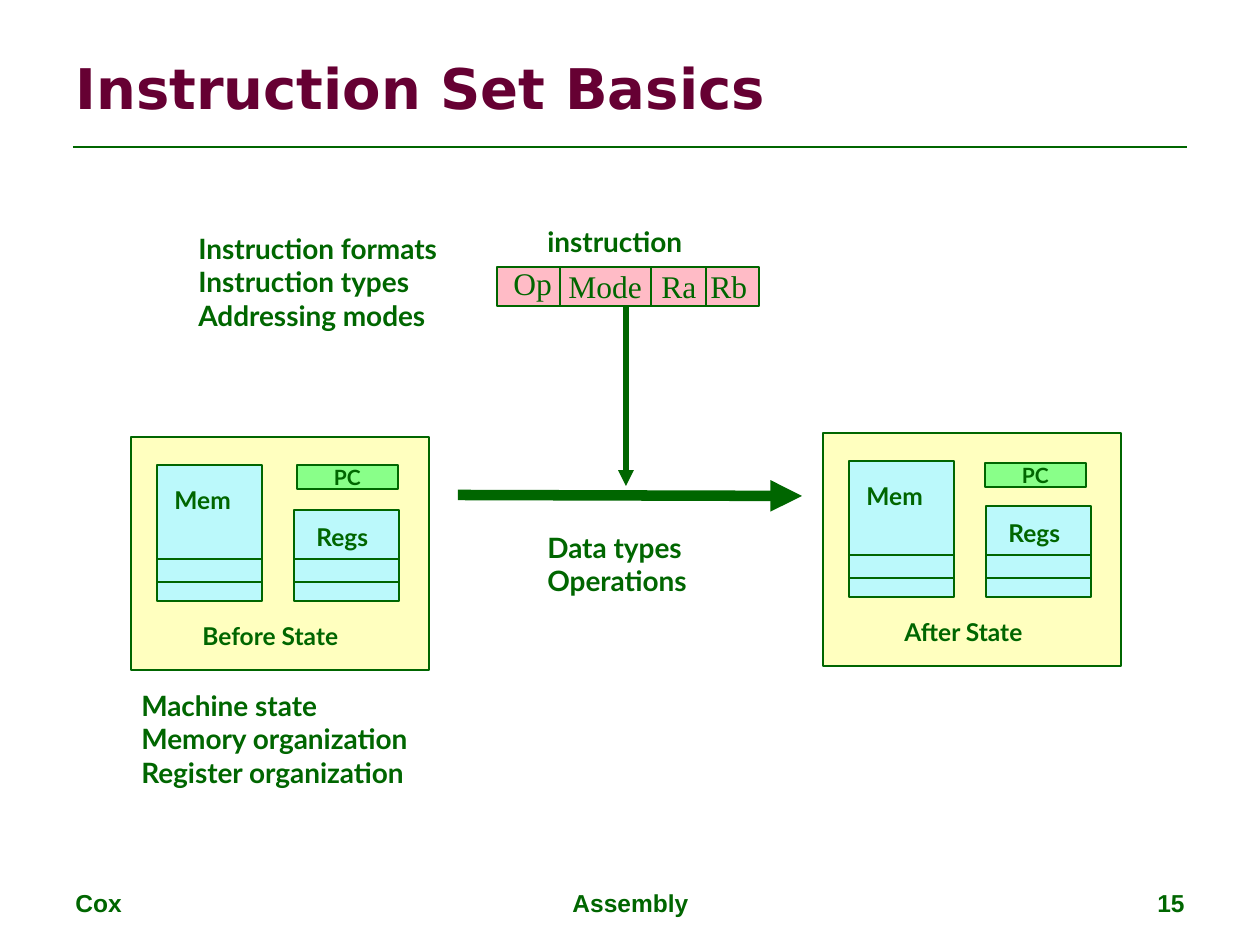
"""Build the instruction set basics slide with machine states before and after an instruction."""
import dataclasses
import typing

import lxml.etree
import pptx
import pptx.dml.color
import pptx.enum.shapes
import pptx.enum.text
import pptx.oxml.ns
import pptx.util

EMU_PER_PX = 914400 / 126
COLORS = {
    "green": "006600",
    "title": "660033",
    "instruction": "FFBBC6",
    "state": "FFFFBF",
    "storage": "BBF9FB",
    "counter": "89FF89",
}
ALIGN = pptx.enum.text.PP_ALIGN
ANCHOR = pptx.enum.text.MSO_ANCHOR


@dataclasses.dataclass(frozen=True)
class TextStyle:
    font: str
    size: int
    bold: bool = True
    color: str = "green"


@dataclasses.dataclass(frozen=True)
class Label:
    text: str
    left: int
    top: int
    width: int
    height: int
    style: TextStyle
    align: ALIGN = ALIGN.LEFT
    anchor: ANCHOR = ANCHOR.TOP


@dataclasses.dataclass(frozen=True)
class MachineState:
    caption: str
    left: int
    top: int
    caption_left: int
    counter_left: int
    counter_top: int


TITLE = TextStyle("DejaVu Sans", 32, color="title")
FOOTER = TextStyle("Arial", 14)
FIELD = TextStyle("Times New Roman", 18, bold=False)
NOTE = TextStyle("Lato", 16)
PART = TextStyle("Lato", 14)
COUNTER = TextStyle("Lato", 12)

LABELS = [
    Label("Instruction Set Basics", 63, 38, 1134, 98, TITLE, anchor=ANCHOR.MIDDLE),
    Label("Cox", 63, 882, 294, 44, FOOTER),
    Label("Assembly", 431, 882, 399, 44, FOOTER, ALIGN.CENTER),
    Label("15", 903, 882, 294, 44, FOOTER, ALIGN.RIGHT),
    Label("Op", 501, 258, 68, 50, FIELD),
    Label("Mode", 556, 261, 102, 50, FIELD),
    Label("Ra", 649, 261, 64, 50, FIELD),
    Label("Rb", 698, 261, 66, 50, FIELD),
    Label("instruction", 535, 218, 178, 47, NOTE),
    Label("Instruction formats\nInstruction types\nAddressing modes", 186, 225, 301, 113, NOTE),
    Label("Data types\nOperations", 535, 524, 180, 81, NOTE),
    Label("Machine state\nMemory organization\nRegister organization", 129, 682, 329, 113, NOTE),
]
FIELD_DIVIDERS = [560, 651, 706]
STATES = [
    MachineState("Before State", 131, 437, 190, 297, 465),
    MachineState("After State", 823, 433, 892, 985, 463),
]


def px(length: int) -> pptx.util.Emu:
    """Turn pixels into EMU."""
    return pptx.util.Emu(round(length * EMU_PER_PX))


def rgb(name: str) -> pptx.dml.color.RGBColor:
    """Look up a named colour."""
    return pptx.dml.color.RGBColor.from_string(COLORS[name])


def write_text(shape: typing.Any, label: Label) -> None:
    """Fill a shape with the styled lines of a label."""
    frame = shape.text_frame
    frame.word_wrap = True
    frame.vertical_anchor = label.anchor
    frame.text = label.text
    for paragraph in frame.paragraphs:
        paragraph.alignment = label.align
        paragraph.font.name = label.style.font
        paragraph.font.size = pptx.util.Pt(label.style.size)
        paragraph.font.bold = label.style.bold
        paragraph.font.color.rgb = rgb(label.style.color)


def add_label(shapes: typing.Any, label: Label) -> None:
    """Draw a text box."""
    box = shapes.add_textbox(px(label.left), px(label.top), px(label.width), px(label.height))
    write_text(box, label)


def add_box(shapes: typing.Any, left: int, top: int, width: int, height: int, fill: str) -> typing.Any:
    """Draw a filled rectangle with a thin green outline."""
    shape = shapes.add_shape(
        pptx.enum.shapes.MSO_SHAPE.RECTANGLE, px(left), px(top), px(width), px(height)
    )
    shape.shadow.inherit = False
    shape.fill.solid()
    shape.fill.fore_color.rgb = rgb(fill)
    shape.line.color.rgb = rgb("green")
    shape.line.width = pptx.util.Pt(1)
    return shape


def add_line(
    shapes: typing.Any, start: tuple[int, int], end: tuple[int, int], width: float = 1, arrow: bool = False
) -> None:
    """Draw a straight green line, with an arrowhead at its end on request."""
    line = shapes.add_connector(
        pptx.enum.shapes.MSO_CONNECTOR.STRAIGHT, *map(px, start), *map(px, end)
    )
    line.line.color.rgb = rgb("green")
    line.line.width = pptx.util.Pt(width)
    if arrow:
        head = lxml.etree.SubElement(line.line._get_or_add_ln(), pptx.oxml.ns.qn("a:tailEnd"))
        head.set("type", "triangle")
    lxml.etree.SubElement(line._element.spPr, pptx.oxml.ns.qn("a:effectLst"))


def add_storage(shapes: typing.Any, name: str, left: int, top: int, height: int, text_left: int, text_top: int) -> None:
    """Draw a named storage block with two cell lines near its bottom."""
    width = 105
    bottom = top + height
    add_box(shapes, left, top, width, height, "storage")
    for rise in (19, 42):
        add_line(shapes, (left, bottom - rise), (left + width, bottom - rise))
    add_label(shapes, Label(name, text_left, text_top, 86, 42, PART))


def add_state(slide: typing.Any, state: MachineState) -> None:
    """Draw a machine state with memory, registers and program counter."""
    shapes = slide.shapes.add_group_shape().shapes
    left, top = state.left, state.top
    add_box(shapes, left, top, 298, 233, "state")
    add_storage(shapes, "Mem", left + 26, top + 28, 136, left + 31, top + 42)
    add_storage(shapes, "Regs", left + 163, top + 73, 91, left + 173, top + 79)
    add_label(shapes, Label(state.caption, state.caption_left, top + 178, 179, 42, PART))
    counter = Label(
        "PC", state.counter_left, state.counter_top, 101, 24, COUNTER, ALIGN.CENTER, ANCHOR.MIDDLE
    )
    box = add_box(slide.shapes, counter.left, counter.top, counter.width, counter.height, "counter")
    write_text(box, counter)
    box.text_frame.margin_top = box.text_frame.margin_bottom = 0


def main() -> None:
    """Build and save the slide."""
    presentation = pptx.Presentation()
    presentation.slide_width, presentation.slide_height = px(1260), px(945)
    slide = presentation.slides.add_slide(presentation.slide_layouts[6])
    shapes = slide.shapes
    add_line(shapes, (73, 147), (1187, 147), 1.5)
    add_box(shapes, 497, 267, 262, 39, "instruction")
    for x in FIELD_DIVIDERS:
        add_line(shapes, (x, 267), (x, 306))
    for state in STATES:
        add_state(slide, state)
    for label in LABELS:
        add_label(shapes, label)
    add_line(shapes, (458, 495), (802, 496), 6, arrow=True)
    add_line(shapes, (626, 306), (626, 486), 3, arrow=True)
    presentation.save("out.pptx")


if __name__ == "__main__":
    main()
